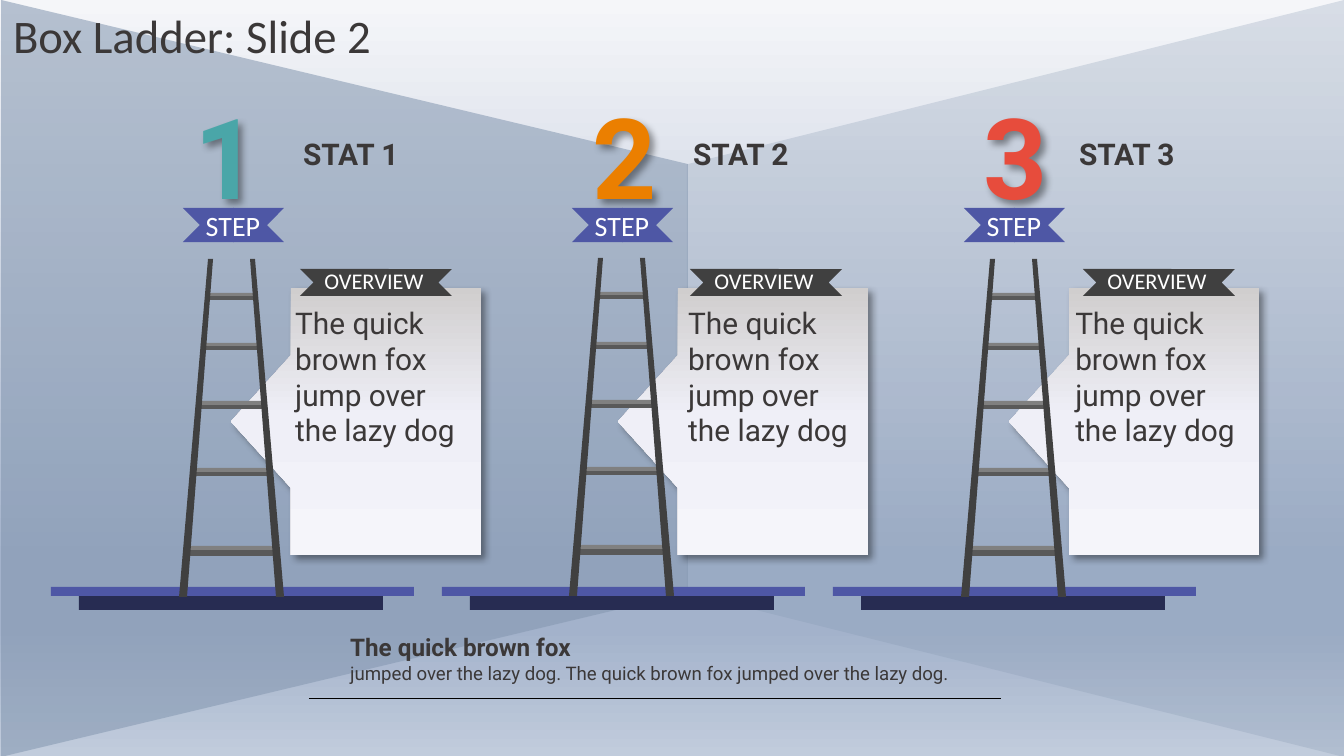
from lxml.etree import SubElement
from pptx import Presentation
from pptx.dml.color import RGBColor
from pptx.enum.shapes import MSO_CONNECTOR as Connector, MSO_SHAPE as Shape
from pptx.enum.text import MSO_ANCHOR as Anchor, PP_ALIGN as Align
from pptx.oxml.ns import qn
from pptx.util import Emu, Pt

PX = 914400 / 134.4
INK, WHITE, BLACK = "3B3838", "FFFFFF", "000000"
INDIGO, NAVY, CHARCOAL = "4E57A5", "272C52", "404040"
RUNG_LIGHT, RUNG_DARK = "808080", "595959"
SKY = [(0, "F5F6F9"), (74, "A3B2CB"), (83, "A3B2CB"), (100, "C1CCDC")]
PAPER = [(0, "D0CECE"), (48, "EFEFF7"), (100, "F5F5FA")]
RUNGS = [(7, 287, 92, 4, 9), (16, 209, 72, 4, 7), (20, 142, 64, 4, 7),
         (22, 84, 58, 3, 6), (27, 34, 47, 3, 6)]
RAIL = [(0, 338), (8, 338), (34, 0), (29, 0)]
LADDER_WIDTH = 105
COLUMNS = [
    dict(digit="1", color="4AA6A8", base=51, digit_x=181, digit_width=101, ladder=(179, 259),
         card=231, stat=290, body=282, overview=300, step=183),
    dict(digit="2", color="EB7F00", base=442, digit_x=579, digit_width=65, ladder=(569, 258),
         card=618, stat=680, body=675, overview=690, step=572),
    dict(digit="3", color="E74C3C", base=833, digit_x=970, digit_width=65, ladder=(961, 259),
         card=1009, stat=1066, body=1062, overview=1083, step=964),
]


def px(*lengths):
    return [Emu(round(length * PX)) for length in lengths]


def rgb(color):
    return RGBColor.from_string(color)


class LadderSlide:
    """Draws styled elements on one slide, measured in px."""

    def __init__(self, deck):
        self.slide = deck.slides.add_slide(deck.slide_layouts[6])
        self.shapes = self.slide.shapes

    def gradient(self, fill, owner, stops, angle):
        fill.gradient()
        fill.gradient_angle = 360 - angle
        stop_list = owner.find(".//" + qn("a:gsLst"))
        for stop in list(stop_list):
            stop_list.remove(stop)
        for position, color in stops:
            stop = SubElement(stop_list, qn("a:gs"), pos=str(position * 1000))
            SubElement(stop, qn("a:srgbClr"), val=color)

    def background(self, stops, angle):
        self.gradient(self.slide.background.fill, self.slide.element, stops, angle)

    def finish(self, shape, color):
        shape.shadow.inherit = False
        shape.line.fill.background()
        shape.fill.solid()
        shape.fill.fore_color.rgb = rgb(color)
        return shape

    def shape(self, kind, area, color, rotation=0, adjustments=(), alpha=100):
        shape = self.finish(self.shapes.add_shape(kind, *px(*area)), color)
        shape.rotation = rotation
        for index, value in enumerate(adjustments):
            shape.adjustments[index] = value
        if alpha < 100:
            tint = shape.element.spPr.find(".//" + qn("a:srgbClr"))
            SubElement(tint, qn("a:alpha"), val=str(alpha * 1000))
        return shape

    def shadow(self, shape):
        shape.shadow.inherit = False
        effects = shape.element.spPr.find(qn("a:effectLst"))
        outer = SubElement(effects, qn("a:outerShdw"), blurRad=str(Pt(4)), dist=str(Pt(3)),
                           dir="2700000", algn="tl", rotWithShape="0")
        tint = SubElement(outer, qn("a:srgbClr"), val=BLACK)
        SubElement(tint, qn("a:alpha"), val="40000")

    def card(self, area):
        card = self.shape(Shape.RIGHT_ARROW_CALLOUT, area, WHITE, 180, (0.102, 0.265, 0.24, 0.834))
        self.gradient(card.fill, card.element.spPr, PAPER, 270)
        self.shadow(card)

    def polygon(self, points, color):
        start, *rest = points
        builder = self.shapes.build_freeform(*start, scale=PX)
        builder.add_line_segments(rest, close=True)
        return self.finish(builder.convert_to_shape(), color)

    def text(self, area, lines, color=INK, font="Roboto", anchor=Anchor.TOP, **para_format):
        box = self.shapes.add_textbox(*px(*area))
        frame = box.text_frame
        frame.word_wrap = True
        frame.vertical_anchor = anchor
        for index, (words, size, bold) in enumerate(lines):
            para = frame.add_paragraph() if index else frame.paragraphs[0]
            for name, value in para_format.items():
                setattr(para, name, value)
            span = para.add_run()
            span.text = words
            for name, value in dict(name=font, size=Pt(size), bold=bold).items():
                setattr(span.font, name, value)
            span.font.color.rgb = rgb(color)
        return box

    def line(self, start, end, color, weight):
        line = self.shapes.add_connector(Connector.STRAIGHT, *px(*start, *end))
        line.line.color.rgb = rgb(color)
        line.line.width = Pt(weight)
        SubElement(line.element.spPr, qn("a:effectLst"))

    def ribbon(self, left, top, width, height, overlap, color):
        self.shape(Shape.CHEVRON, (left, top, width, height), color)
        self.shape(Shape.CHEVRON, (left + width - overlap, top, width, height), color, 180)

    def ladder(self, left, top):
        for x, y, width, light, dark in RUNGS:
            self.shape(Shape.RECTANGLE, (left + x, top + y + 1, width, dark), RUNG_DARK)
            self.shape(Shape.RECTANGLE, (left + x, top + y, width, light), RUNG_LIGHT)
        self.polygon([(left + LADDER_WIDTH - x, top + y) for x, y in RAIL], CHARCOAL)
        self.polygon([(left + x, top + y) for x, y in RAIL], CHARCOAL)

    def column(self, digit, color, base, digit_x, digit_width, ladder, card, stat, body,
               overview, step):
        self.card((card, 288, 250, 267))
        self.shape(Shape.RECTANGLE, (base + 28, 595, 304, 15), NAVY)
        self.shape(Shape.RECTANGLE, (base, 587, 363, 9), INDIGO)
        self.shadow(self.text((digit_x, 81, digit_width, 149), [(digit, 60, True)], color))
        self.ladder(*ladder)
        self.text((stat, 133, 214, 75), [(f"STAT {digit}", 16, True)], line_spacing=0.9)
        self.text((body, 298, 197, 257),
                  [("The quick brown fox jump over the lazy dog", 16, False)])
        self.ribbon(overview, 269, 102, 27, 52, CHARCOAL)
        self.text((overview - 7, 261, 162, 40), [("OVERVIEW", 12, False)], WHITE, "Calibri",
                  alignment=Align.CENTER)
        self.ribbon(step, 208, 68, 34, 35, INDIGO)
        self.text((step + 1, 195, 98, 60), [("STEP", 15, False)], WHITE, "Calibri",
                  Anchor.MIDDLE, alignment=Align.CENTER)


def main():
    deck = Presentation()
    deck.slide_width, deck.slide_height = px(1344, 756)
    page = LadderSlide(deck)
    page.background(SKY, 90)
    page.shape(Shape.TRAPEZOID, (-34, 35, 757, 687), "8497B0", 90, (0.239,), 56)
    page.shape(Shape.TRAPEZOID, (637, 50, 757, 657), "8497B0", 270, (0.25,), 26)
    page.text((0, 0, 817, 70), [("Box Ladder: Slide 2", 25, False)], font="Calibri")
    for column in COLUMNS:
        page.column(**column)
    page.text((337, 626, 871, 153), [
        ("The quick brown fox", 13, True),
        ("jumped over the lazy dog. The quick brown fox jumped over the lazy dog.", 10, False),
    ])
    page.line((309, 699), (1001, 699), BLACK, 0.5)
    deck.save("out.pptx")


if __name__ == "__main__":
    main()
